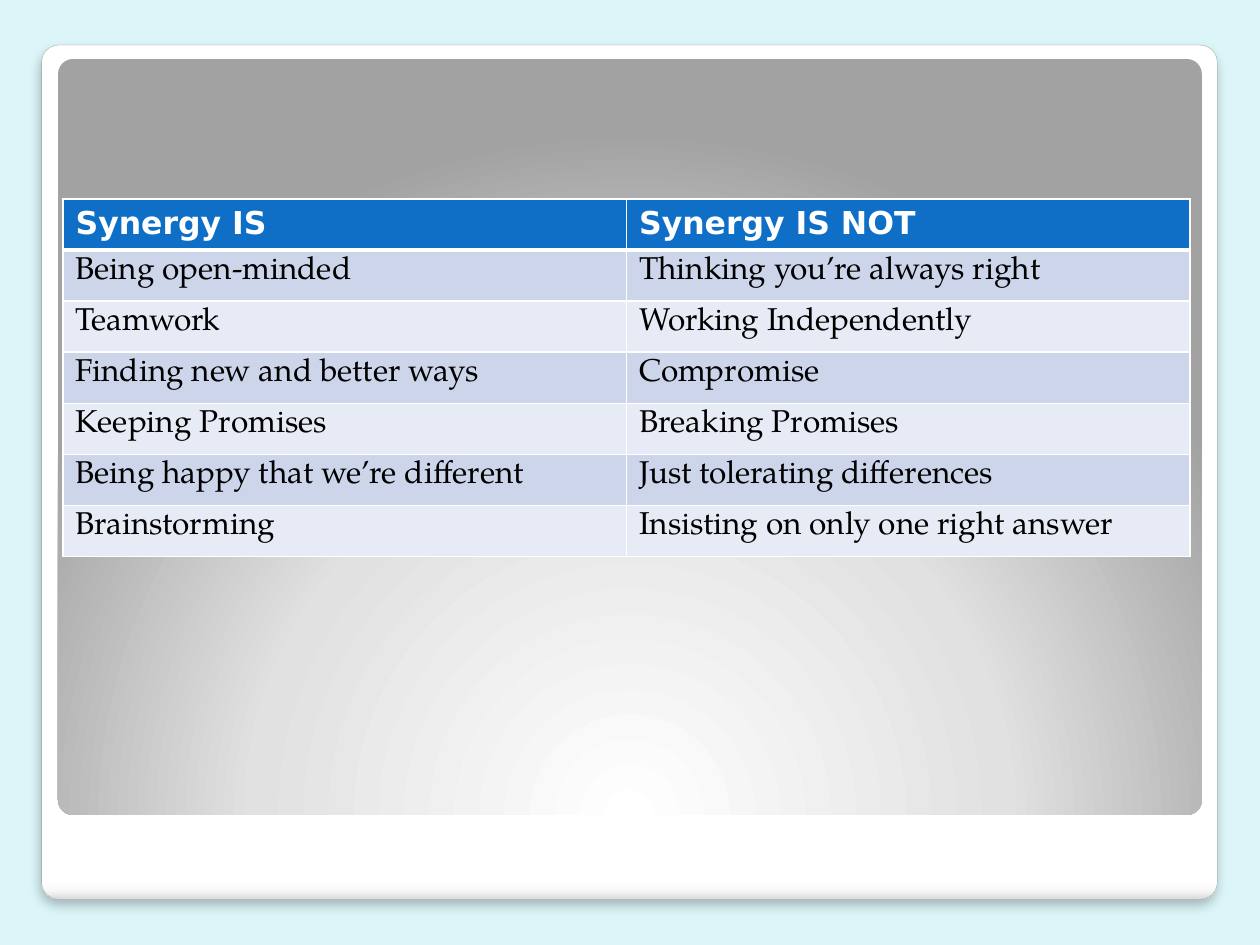
from lxml.etree import SubElement
from pptx import Presentation
from pptx.dml.color import RGBColor
from pptx.enum.shapes import MSO_SHAPE
from pptx.oxml.ns import qn
from pptx.util import Cm, Pt

ROWS = [
    ("Synergy IS", "Synergy IS NOT"),
    ("Being open-minded", "Thinking you’re always right"),
    ("Teamwork", "Working Independently"),
    ("Finding new and better ways", "Compromise"),
    ("Keeping Promises", "Breaking Promises"),
    ("Being happy that we’re different", "Just tolerating differences"),
    ("Brainstorming", "Insisting on only one right answer"),
]
HEAD, BANDS = "0F6FC6", ("E7EBF5", "CCD5EA")
CARD = [(0, "FFFFFF"), (98, "FFFFFF"), (99, "F7F7F7"), (100, "DADADA")]
PANEL = [(0, "FFFFFF"), (55, "E1E1E1"), (100, "A2A2A2")]
ROW_H, COL_W = 1.03, 11.36


def paint(fill, color):
    fill.solid()
    fill.fore_color.rgb = RGBColor.from_string(color)


def add(parent, tag, **attrs):
    """Append a drawing element with the given attributes."""
    return SubElement(parent, qn("a:" + tag), {k: str(v) for k, v in attrs.items()})


def add_color(parent, color):
    return add(parent, "srgbClr", val=color)


def add_box(slide, stops, left, top, width, height):
    """Add a rounded box and return it with its emptied gradient."""
    box = slide.shapes.add_shape(
        MSO_SHAPE.ROUNDED_RECTANGLE, Cm(left), Cm(top), Cm(width), Cm(height))
    box.adjustments[0] = 0.02
    box.shadow.inherit = False
    box.fill.gradient()
    grad = box._element.spPr.find(qn("a:gradFill"))
    for child in list(grad):
        grad.remove(child)
    group = add(grad, "gsLst")
    for pos, color in stops:
        add_color(add(group, "gs", pos=pos * 1000), color)
    return box, grad


def add_card(slide):
    card, grad = add_box(slide, CARD, 0.84, 0.91, 23.7, 17.22)
    add(grad, "lin", ang=90 * 60000, scaled=0)
    paint(card.line.fill, "A4A4A4")
    card.line.width = Pt(0.16)
    effects = card._element.spPr.find(qn("a:effectLst"))
    shade = add(effects, "outerShdw", blurRad=Pt(6), dist=Pt(4),
                dir=90 * 60000, algn="t", rotWithShape=0)
    add(add_color(shade, "000000"), "alpha", val=25000)


def add_panel(slide):
    panel, grad = add_box(slide, PANEL, 1.17, 1.19, 23.06, 15.24)
    glow = add(grad, "path", path="circle")
    add(glow, "fillToRect", l=50000, t=175000, r=50000, b=-75000)
    panel.line.fill.background()


def set_edges(cell, bottom):
    props = cell._tc.get_or_add_tcPr()
    for side, width in (("L", 1), ("R", 1), ("T", 1), ("B", bottom)):
        edge = add(props, "ln" + side, w=Pt(width))
        add_color(add(edge, "solidFill"), "FFFFFF")


def fill_cell(cell, text, row):
    top = row == 0
    set_edges(cell, 3 if top else 1)
    paint(cell.fill, HEAD if top else BANDS[row % 2])
    cell.text_frame.text = text
    font = cell.text_frame.paragraphs[0].runs[0].font
    font.name = "DejaVu Sans" if top else "TeX Gyre Pagella"
    font.size = Pt(18)
    font.bold = top
    font.color.rgb = RGBColor.from_string("FFFFFF" if top else "000000")


def add_grid(slide):
    count, wide = len(ROWS), len(ROWS[0])
    grid = slide.shapes.add_table(
        count, wide, Cm(1.27), Cm(4.01), Cm(COL_W * wide), Cm(ROW_H * count)).table
    for r, texts in enumerate(ROWS):
        grid.rows[r].height = Cm(ROW_H)
        for c, text in enumerate(texts):
            fill_cell(grid.cell(r, c), text, r)


def main():
    deck = Presentation()
    deck.slide_width, deck.slide_height = Cm(25.4), Cm(19.05)
    slide = deck.slides.add_slide(deck.slide_layouts[6])
    paint(slide.background.fill, "DBF5F9")
    add_card(slide)
    add_panel(slide)
    add_grid(slide)
    deck.save("out.pptx")


if __name__ == "__main__":
    main()
